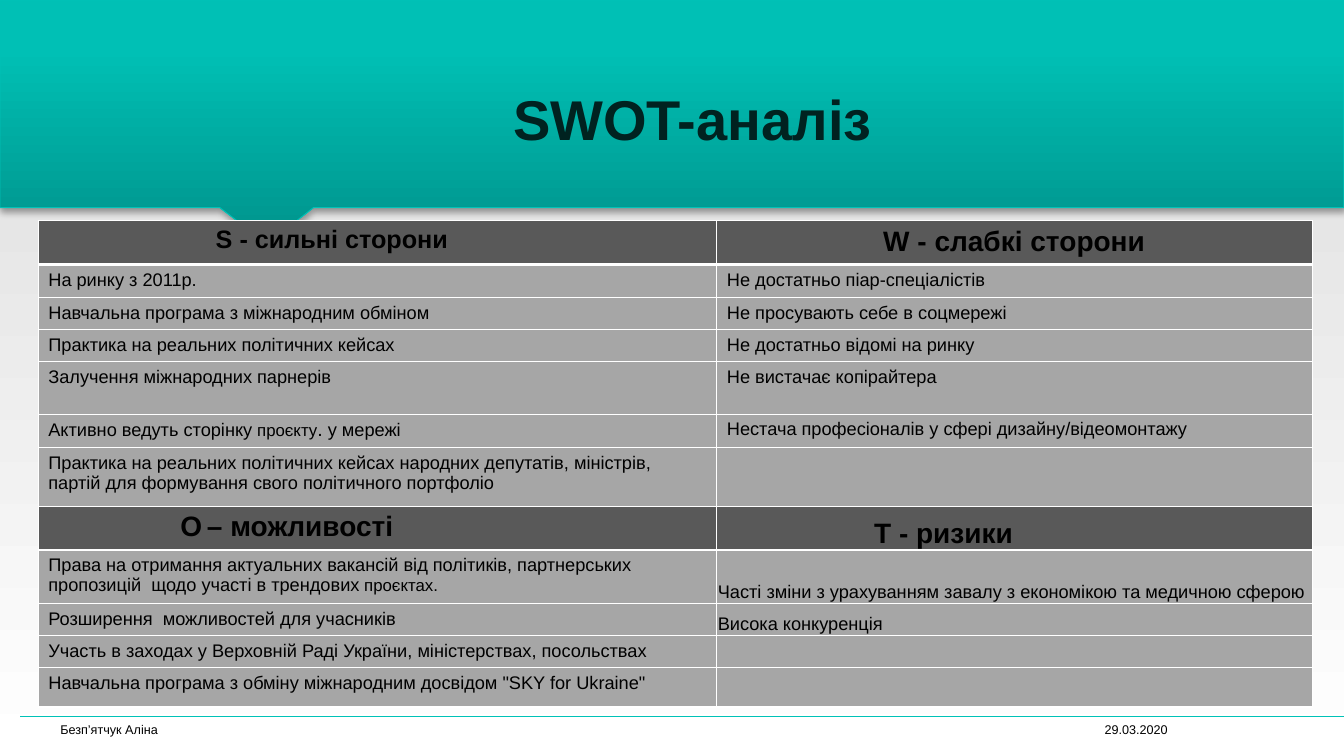
import pptx
import pptx.dml.color
import pptx.enum.shapes
import pptx.enum.text
import pptx.oxml
import pptx.oxml.ns
import pptx.util
import lxml.etree

Inch = pptx.util.Inches
Pt = pptx.util.Pt
qn = pptx.oxml.ns.qn
Anchor = pptx.enum.text.MSO_ANCHOR
Align = pptx.enum.text.PP_ALIGN
WIDE, HIGH = 13.33, 7.5
TEAL, DARK, GREY = "00C2B7", "595959", "A6A6A6"

COLS = [6.73, 5.91]
ROWS = [0.42, 0.33, 0.31, 0.31, 0.52, 0.31, 0.58, 0.42, 0.52, 0.31, 0.31, 0.39]
HEADS = {0: [1.76, 1.65], 7: [1.41, 1.56]}
LOW = [(7, 1), (8, 1), (9, 1)]
CELLS = [
    [[("S - сильні сторони", 18)], [("W - слабкі сторони", 20)]],
    [[("На ринку з 2011р.", 13)], [("Не достатньо піар-спеціалістів", 13)]],
    [[("Навчальна програма з міжнародним обміном", 13)],
     [("Не просувають себе в соцмережі", 13)]],
    [[("Практика на реальних політичних кейсах", 13)],
     [("Не достатньо відомі на ринку", 13)]],
    [[("Залучення міжнародних парнерів", 13)], [("Не вистачає копірайтера", 13)]],
    [[("Активно ведуть сторінку ", 13), ("проєкту", 12), (".", 14), (" у мережі", 13)],
     [("Нестача професіоналів у сфері дизайну/відеомонтажу", 13)]],
    [[("Практика на реальних політичних кейсах народних депутатів, міністрів, "
       "партій для формування свого політичного портфоліо", 13)], []],
    [[("O", 20), (" ", 12), ("– можливості", 20)], [("T - ризики", 20)]],
    [[("Права на отримання актуальних вакансій від політиків, партнерських "
       "пропозицій  щодо участі в трендових ", 13), ("проєктах.", 12)],
     [("Часті зміни з урахуванням завалу з економікою та медичною сферою", 13)]],
    [[("Розширення  можливостей для учасників", 13)], [("Висока конкуренція", 13)]],
    [[("Участь в заходах у Верховній Раді України, міністерствах, посольствах", 13)], []],
    [[("Навчальна програма з обміну міжнародним досвідом \"SKY for Ukraine\"", 13)], []],
]


def paint(color, value):
    color.rgb = pptx.dml.color.RGBColor.from_string(value)


def node(name, parent, **attrs):
    item = lxml.etree.SubElement(parent, qn(name))
    for key, value in attrs.items():
        item.set(key, str(value))
    return item


def blend(fill, root, stops, angle):
    fill.gradient()
    fill.gradient_angle = angle
    group = next(root.iter(qn("a:gsLst")))
    for old in list(group):
        group.remove(old)
    for spot, value in stops:
        stop = node("a:gs", group, pos=spot * 1000)
        node("a:srgbClr", stop, val=value)


def shade(effects, blur, dist, angle, alpha):
    cast = node("a:outerShdw", effects, blurRad=Pt(blur), dist=Pt(dist),
                dir=angle * 60000, algn="tl", rotWithShape=0)
    tint = node("a:srgbClr", cast, val="000000")
    node("a:alpha", tint, val=alpha * 1000)


def write(par, text, size, color="000000", bold=False):
    run = par.add_run()
    run.text = text
    run.font.name = "Arial"
    run.font.size = Pt(size)
    run.font.bold = bold
    paint(run.font.color, color)
    return run


def label(slide, box, text, size, align, color="000000", bold=False):
    frame = slide.shapes.add_textbox(*map(Inch, box)).text_frame
    frame.word_wrap = True
    frame.vertical_anchor = Anchor.BOTTOM
    par = frame.paragraphs[0]
    par.alignment = align
    return write(par, text, size, color, bold)


def banner(slide, box):
    left, top, wide, high = box
    edge = top + 2.06
    tip = top + high
    build = slide.shapes.build_freeform(Inch(left + wide), Inch(top), scale=1.0)
    points = [(left, top), (left, edge), (left + 2.18, edge), (left + 2.6, tip - 0.01),
              (left + 2.64, tip), (left + 2.67, tip), (left + 2.7, tip - 0.01),
              (left + 3.11, edge), (left + wide, edge)]
    build.add_line_segments([(Inch(x), Inch(y)) for x, y in points], close=True)
    shape = build.convert_to_shape()
    blend(shape.fill, shape.element,
          [(0, "00948C"), (80, "00C0B5"), (100, "00C1B6")], 90)
    paint(shape.line.color, TEAL)
    shape.line.width = Pt(0.75)
    shape.shadow.inherit = False
    shade(next(shape.element.iter(qn("a:effectLst"))), 3.1, 1.8, 90, 35)
    run = label(slide, (left + 1.29, top + 0.49, 11.15, 1.06),
                "SWOT-аналіз", 40, Align.CENTER, "002220", True)
    props = run.font.fill and run._r.get_or_add_rPr()
    effects = pptx.oxml.parse_xml(
        '<a:effectLst xmlns:a="http://schemas.openxmlformats.org/drawingml/2006/main"/>')
    props.find(qn("a:solidFill")).addnext(effects)
    shade(effects, 3, 2, 45, 45)


def footer(slide, box):
    left, top, wide, high = box
    rule = slide.shapes.add_connector(
        pptx.enum.shapes.MSO_CONNECTOR.STRAIGHT,
        Inch(left), Inch(top + 0.15), Inch(left + wide), Inch(top + 0.15))
    paint(rule.line.color, TEAL)
    rule.line.width = Pt(0.75)
    node("a:effectLst", rule.element.spPr)
    label(slide, (left + 10.01, top, 1.47, high), "29.03.2020", 9, Align.RIGHT)
    label(slide, (left + 0.3, top, 9.45, high), "Безп’ятчук Аліна", 9, Align.LEFT)


def border(cell, row):
    props = cell._tc.get_or_add_tcPr()
    thick = {"T": row == 1, "B": row == 0}
    for spot, side in enumerate("LRTB"):
        line = node("a:ln" + side, props, w=Pt(3 if thick.get(side) else 1))
        node("a:srgbClr", node("a:solidFill", line), val="FFFFFF")
        props.insert(spot, line)


def fill_cell(cell, row, col):
    head = row in HEADS
    cell.fill.solid()
    paint(cell.fill.fore_color, DARK if head else GREY)
    border(cell, row)
    if (row, col) in LOW:
        cell.vertical_anchor = Anchor.BOTTOM
        cell.margin_left = cell.margin_right = Inch(0.01)
        cell.margin_top = cell.margin_bottom = Inch(0.01)
    if head:
        cell.margin_left = Inch(HEADS[row][col])
    par = cell.text_frame.paragraphs[0]
    for text, size in CELLS[row][col]:
        write(par, text, size, bold=head)
    if not CELLS[row][col]:
        node("a:endParaRPr", par._p, sz=1300)


def grid(slide, box):
    table = slide.shapes.add_table(len(ROWS), len(COLS), *map(Inch, box)).table
    for col, wide in enumerate(COLS):
        table.columns[col].width = Inch(wide)
    for row, high in enumerate(ROWS):
        table.rows[row].height = Inch(high)
        for col in range(len(COLS)):
            fill_cell(table.cell(row, col), row, col)


def main():
    deck = pptx.Presentation()
    deck.slide_width, deck.slide_height = Inch(WIDE), Inch(HIGH)
    slide = deck.slides.add_slide(deck.slide_layouts[6])
    blend(slide.background.fill, slide.element, [(0, "DBDBDB"), (100, "FFFFFF")], 270)
    banner(slide, (0, 0, WIDE, 2.39))
    footer(slide, (0.2, 6.96, WIDE - 0.2, 0.4))
    grid(slide, (0.38, 2.19, sum(COLS), sum(ROWS)))
    deck.save("out.pptx")


if __name__ == "__main__":
    main()
